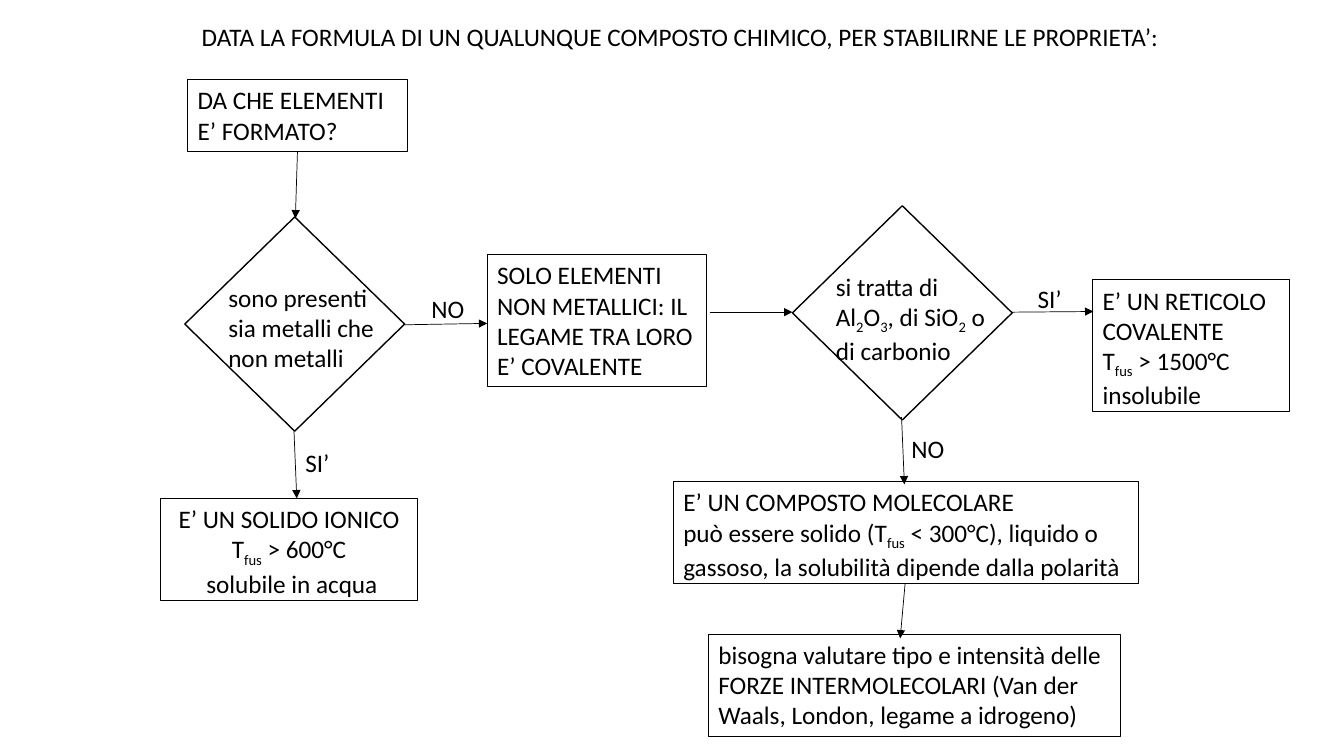
import dataclasses

import lxml.etree
import pptx
import pptx.dml.color
import pptx.enum.shapes
import pptx.enum.text
import pptx.oxml.ns
import pptx.util

Pt = pptx.util.Pt
Kind = pptx.enum.shapes.MSO_SHAPE
Align = pptx.enum.text.PP_ALIGN
qn = pptx.oxml.ns.qn


@dataclasses.dataclass(frozen=True)
class Theme:
    """Colours, type and line widths of the slide."""
    ink = pptx.dml.color.RGBColor(0, 0, 0)
    paper = pptx.dml.color.RGBColor(255, 255, 255)
    face = "Calibri"
    size = Pt(18)
    sub = "-25000"
    frame = Pt(0.75)
    edge = Pt(1)
    thin = Pt(0.5)


THEME = Theme()
FONT = {"name": THEME.face, "size": THEME.size}
FRAME = {
    "word_wrap": True,
    "auto_size": pptx.enum.text.MSO_AUTO_SIZE.SHAPE_TO_FIT_TEXT,
    "vertical_anchor": pptx.enum.text.MSO_ANCHOR.TOP,
}


def style(item, values):
    """Set each named attribute of an item."""
    for name, value in values.items():
        setattr(item, name, value)


def place(x, y, w, h):
    """Turn a box in points into lengths."""
    return [Pt(n) for n in (x, y, w, h)]


def write(shape, text, align=Align.LEFT):
    """Write lines of text, with subscripts between underscores."""
    frame = shape.text_frame
    style(frame, FRAME)
    for i, line in enumerate(text.split("\n")):
        para = frame.add_paragraph() if i else frame.paragraphs[0]
        para.alignment = align
        for j, part in enumerate(line.split("_")):
            run = para.add_run()
            run.text = part
            style(run.font, FONT)
            run.font.color.rgb = THEME.ink
            if j % 2:
                run._r.get_or_add_rPr().set("baseline", THEME.sub)


def outline(shape, width):
    """Draw a plain black edge without shadow."""
    shape.shadow.inherit = False
    shape.line.color.rgb = THEME.ink
    shape.line.width = width


def label(shapes, x, y, w, h, text):
    """Add a text without a frame."""
    write(shapes.add_textbox(*place(x, y, w, h)), text)


def box(shapes, x, y, w, h, text, align=Align.LEFT):
    """Add a framed text."""
    shape = shapes.add_shape(Kind.RECTANGLE, *place(x, y, w, h))
    shape.fill.background()
    outline(shape, THEME.frame)
    write(shape, text, align)


def choice(shapes, x, y, text):
    """Add a decision diamond with its question."""
    group = shapes.add_group_shape().shapes
    shape = group.add_shape(Kind.DIAMOND, *place(x, y, 157, 153))
    shape.fill.solid()
    shape.fill.fore_color.rgb = THEME.paper
    outline(shape, THEME.edge)
    label(group, x + 24, y + 43, 125, 73, text)


def arrow(shapes, x, y, right, down):
    """Add an arrow from a point by a given step."""
    kind = pptx.enum.shapes.MSO_CONNECTOR.STRAIGHT
    ends = place(x, y, x + right, y + down)
    link = shapes.add_connector(kind, *ends)
    link.line.color.rgb = THEME.ink
    link.line.width = THEME.thin
    props = link._element.spPr
    tail = lxml.etree.SubElement(props.find(qn("a:ln")), qn("a:tailEnd"))
    tail.set("type", "triangle")
    lxml.etree.SubElement(props, qn("a:effectLst"))


def metals(shapes, x, y):
    """Draw the branch that asks about metals."""
    box(shapes, x + 19, y, 157, 51, "DA CHE ELEMENTI E’ FORMATO?")
    arrow(shapes, x + 97.5, y + 51, -1.5, 48)
    choice(shapes, x + 17, y + 98, "sono presenti sia metalli che non metalli")
    arrow(shapes, x + 95, y + 251, 2, 48)
    label(shapes, x + 96, y + 259, 35, 29, "SI’")
    box(shapes, x, y + 299, 183, 73,
        "E’ UN SOLIDO IONICO\nT_fus_ > 600°C\n solubile in acqua", Align.CENTER)
    arrow(shapes, x + 174, y + 175, 59, -1)
    label(shapes, x + 186, y + 149, 45, 29, "NO")
    box(shapes, x + 233, y + 125, 157, 94,
        "SOLO ELEMENTI NON METALLICI: IL LEGAME TRA LORO E’ COVALENTE")


def bonds(shapes, x, y):
    """Draw the branch that sorts covalent matter."""
    choice(shapes, x + 85, y,
           "si tratta di Al_2_O_3_, di SiO_2_ o di carbonio")
    arrow(shapes, x + 26, y + 76, 59, 0)
    arrow(shapes, x + 242, y + 76, 58, -0.5)
    box(shapes, x + 299.5, y + 53, 140.5, 94,
        "E’ UN RETICOLO COVALENTE\nT_fus_ > 1500°C\ninsolubile")
    label(shapes, x + 253, y + 52, 35, 29, "SI’")
    arrow(shapes, x + 163, y + 151, 2, 48)
    box(shapes, x, y + 197, 332, 73,
        "E’ UN COMPOSTO MOLECOLARE\npuò essere solido (T_fus_ < 300°C), "
        "liquido o gassoso, la solubilità dipende dalla polarità")
    label(shapes, x + 163, y + 159, 45, 29, "NO")
    box(shapes, x + 25, y + 306, 294.5, 73,
        "bisogna valutare tipo e intensità delle FORZE INTERMOLECOLARI "
        "(Van der Waals, London, legame a idrogeno)")
    arrow(shapes, x + 165.5, y + 270, -3.5, 39)


def main():
    """Build the slide and save it."""
    deck = pptx.Presentation()
    style(deck, {"slide_width": Pt(960), "slide_height": Pt(540)})
    shapes = deck.slides.add_slide(deck.slide_layouts[6]).shapes
    label(shapes, 137, 12, 742, 29,
          "DATA LA FORMULA DI UN QUALUNQUE COMPOSTO CHIMICO, "
          "PER STABILIRNE LE PROPRIETA’:")
    metals(shapes, 115, 57)
    bonds(shapes, 481, 147)
    deck.save("out.pptx")


if __name__ == "__main__":
    main()
